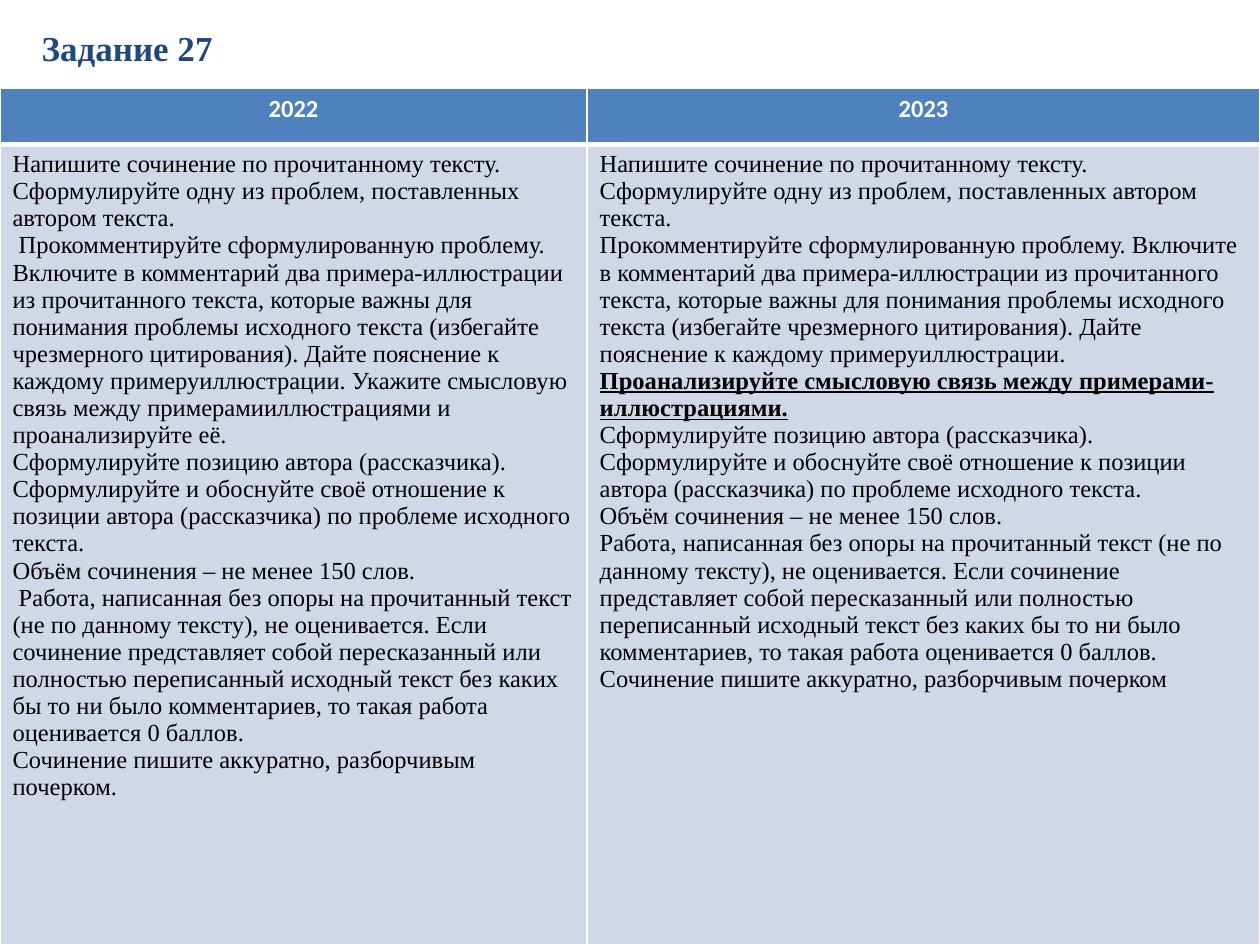
"""Builds a slide comparing the wording of task 27 in 2022 and 2023."""
from lxml import etree
from pptx import Presentation
from pptx import util as u
from pptx.dml.color import RGBColor
from pptx.enum import text
from pptx.oxml import ns

NAVY = RGBColor(0x1F, 0x49, 0x7D)
BLUE = RGBColor(0x4F, 0x81, 0xBD)
PALE = RGBColor(0xD0, 0xD8, 0xE8)
WHITE = RGBColor(0xFF, 0xFF, 0xFF)
BLACK = RGBColor(0, 0, 0)
SERIF = "Times New Roman"
COLUMN_SHARES = (0.466, 0.534)
ROW_SHARES = (0.06, 0.847)

TOPIC = ("Напишите сочинение по прочитанному тексту. Сформулируйте одну из проблем, "
         "поставленных автором текста.")
COMMENT = ("Прокомментируйте сформулированную проблему. Включите в комментарий два "
           "примера-иллюстрации из прочитанного текста, которые важны для понимания проблемы "
           "исходного текста (избегайте чрезмерного цитирования). Дайте пояснение к каждому "
           "примеруиллюстрации. ")
OLD_LINK = "Укажите смысловую связь между примерамииллюстрациями и проанализируйте её."
NEW_LINK = "Проанализируйте смысловую связь между примерами-иллюстрациями."
POSITION = ("Сформулируйте позицию автора (рассказчика). Сформулируйте и обоснуйте своё "
            "отношение к позиции автора (рассказчика) по проблеме исходного текста.")
VOLUME = "Объём сочинения – не менее 150 слов."
GRADING = ("Работа, написанная без опоры на прочитанный текст (не по данному тексту), не "
           "оценивается. Если сочинение представляет собой пересказанный или полностью "
           "переписанный исходный текст без каких бы то ни было комментариев, то такая "
           "работа оценивается 0 баллов.")
HANDWRITING = "Сочинение пишите аккуратно, разборчивым почерком"

TASKS = {
    "2022": [[TOPIC], [" " + COMMENT + OLD_LINK], [POSITION], [VOLUME],
             [" " + GRADING], [HANDWRITING + "."]],
    "2023": [[TOPIC], [COMMENT, NEW_LINK], [POSITION], [VOLUME],
             [GRADING + " " + HANDWRITING]],
}


def add_run(paragraph, words, size, font, color, bold=False):
    run = paragraph.add_run()
    run.text = words
    run.font.size = u.Pt(size)
    run.font.name = font
    run.font.color.rgb = color
    run.font.bold = bold
    return run


def format_cell(cell, fill, edges):
    properties = cell._tc.get_or_add_tcPr()
    for edge, width in edges.items():
        line = etree.SubElement(properties, ns.qn("a:" + edge), w=str(u.Pt(width)))
        solid = etree.SubElement(line, ns.qn("a:solidFill"))
        etree.SubElement(solid, ns.qn("a:srgbClr"), val=str(WHITE))
    cell.fill.solid()
    cell.fill.fore_color.rgb = fill


presentation = Presentation()
presentation.slide_width, presentation.slide_height = u.Inches(10), u.Inches(7.5)
width, height = presentation.slide_width, presentation.slide_height
slide = presentation.slides.add_slide(presentation.slide_layouts[5])

title = slide.shapes.title
title.left, title.top = int(width * 0.023), int(height * 0.021)
title.width, title.height = int(width * 0.313), int(height * 0.058)
title.text_frame.vertical_anchor = text.MSO_ANCHOR.TOP
title.text_frame.auto_size = text.MSO_AUTO_SIZE.SHAPE_TO_FIT_TEXT
title.text_frame.paragraphs[0].alignment = text.PP_ALIGN.LEFT
add_run(title.text_frame.paragraphs[0], "Задание 27", 20, SERIF, NAVY, True)

table_height = int(height * sum(ROW_SHARES))
table = slide.shapes.add_table(2, 2, 0, height - table_height, width, table_height).table
for row, share in zip(table.rows, ROW_SHARES):
    row.height = int(height * share)

for index, (year, paragraphs) in enumerate(TASKS.items()):
    table.columns[index].width = int(width * COLUMN_SHARES[index])
    header, body = table.cell(0, index), table.cell(1, index)
    format_cell(header, BLUE, {"lnL": 1, "lnR": 1, "lnT": 1, "lnB": 3})
    format_cell(body, PALE, {"lnL": 1, "lnR": 1, "lnT": 3, "lnB": 1})

    paragraph = header.text_frame.paragraphs[0]
    paragraph.alignment = text.PP_ALIGN.CENTER
    add_run(paragraph, year, 14, "Calibri", WHITE, True)

    for number, pieces in enumerate(paragraphs):
        frame = body.text_frame
        paragraph = frame.add_paragraph() if number else frame.paragraphs[0]
        for piece in pieces:
            changed = piece == NEW_LINK
            run = add_run(paragraph, piece, 14, SERIF, BLACK, changed)
            run.font.underline = changed

presentation.save("out.pptx")
